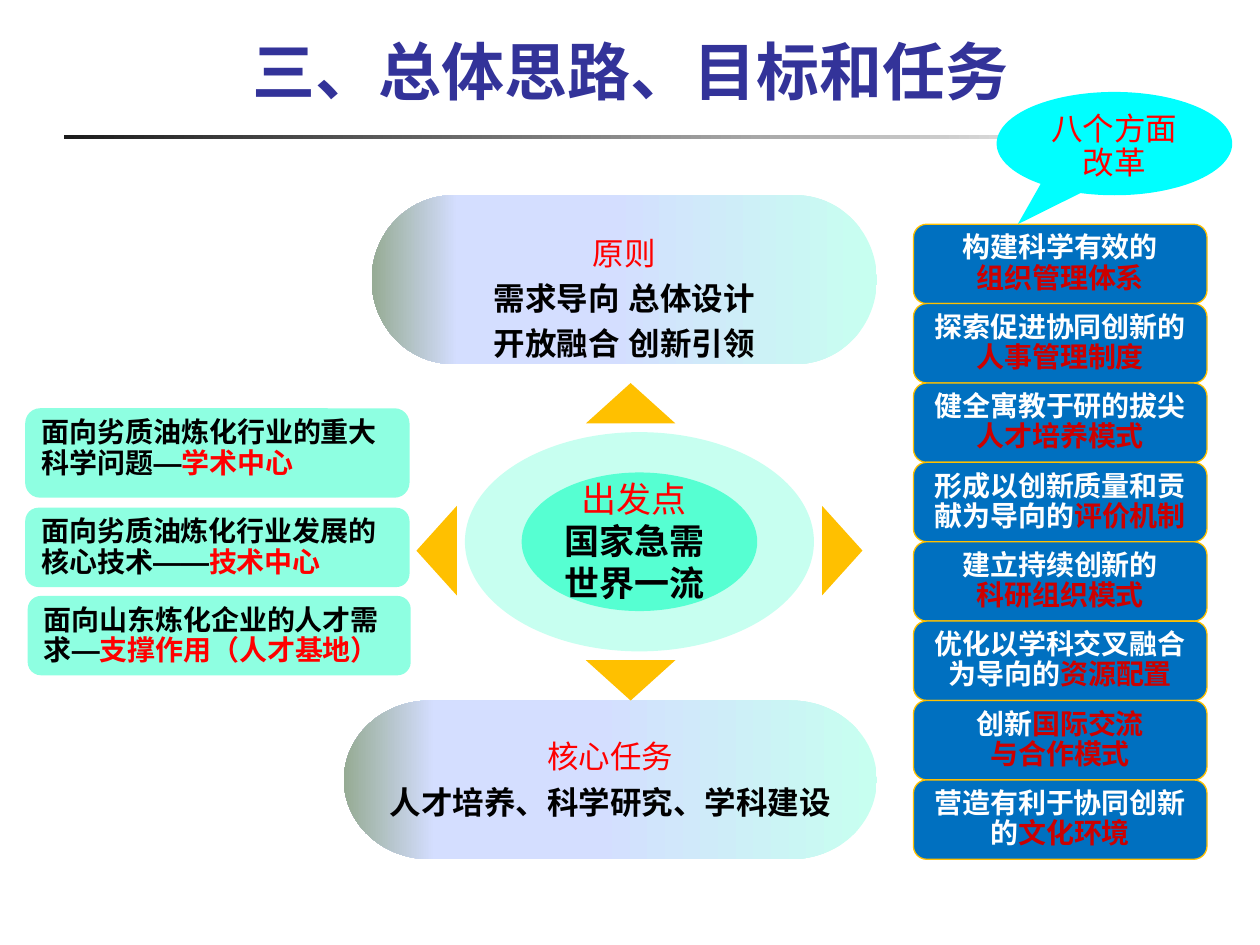
import pptx
import pptx.dml.color
import pptx.enum.lang
import pptx.enum.shapes
import pptx.enum.text
import pptx.oxml
import pptx.oxml.ns
import pptx.util
from pptx.util import Inches

SHAPE = pptx.enum.shapes.MSO_SHAPE
ALIGN = pptx.enum.text.PP_ALIGN
ANCHOR = pptx.enum.text.MSO_ANCHOR

RED, DARK_RED, BLACK, WHITE = "FF0000", "CC0000", "000000", "FFFFFF"
AMBER = "FFC000"
CAPSULE_STOPS = [(0, "C7FFF0"), (53, "D4DEFF"), (83, "D4DEFF"), (100, "96AB94")]
RULE_STOPS = [(0, "1C1C1C"), (100, "FFFFFF")]

# Paragraphs are lists of (text, colour, bold) runs.
TITLE = [[("三、总体思路、目标和任务", "333399", True)]]
CAPSULES = [
    ((2.95, 1.55, 4.01, 1.34), [
        [("原则", RED, False)],
        [("需求导向 总体设计", BLACK, True)],
        [("开放融合 创新引领", BLACK, True)],
    ]),
    ((2.73, 5.56, 4.23, 1.26), [
        [("核心任务", RED, False)],
        [("人才培养、科学研究、学科建设", BLACK, True)],
    ]),
]
CENTRE = [
    [("出发点", RED, False)],
    [("国家急需", BLACK, True)],
    [("世界一流", BLACK, True)],
]
ELLIPSES = [((3.69, 3.43, 2.77, 1.74), "C7FFF0"), ((4.14, 3.75, 1.87, 1.1), "56FFD2")]
ARROWS = [(4.65, 3.04, 0), (4.65, 5.24, 180), (3.11, 4.21, 270), (6.33, 4.21, 90)]
GOALS = [
    ((0.2, 3.24, 3.05, 0.71), "面向劣质油炼化行业的重大科学问题—", "学术中心"),
    ((0.2, 4.03, 3.05, 0.63), "面向劣质油炼化行业发展的核心技术——", "技术中心"),
    ((0.22, 4.73, 3.04, 0.63), "面向山东炼化企业的人才需求—", "支撑作用（人才基地）"),
]
# Each reform: paragraphs of (plain part, highlighted part).
REFORMS = [
    [("构建科学有效的", ""), ("", "组织管理体系")],
    [("探索促进协同创新的", ""), ("", "人事管理制度")],
    [("健全寓教于研的拔尖", ""), ("", "人才培养模式")],
    [("形成以创新质量和贡献为导向的", "评价机制")],
    [("建立持续创新的", ""), ("", "科研组织模式")],
    [("优化以学科交叉融合", ""), ("为导向的", "资源配置")],
    [("创新", "国际交流"), ("", "与合作模式")],
    [("营造有利于协同创新", ""), ("的", "文化环境")],
]
REFORM_LEFT, REFORM_TOP, REFORM_WIDTH, REFORM_HEIGHT = 7.25, 1.78, 2.33, 0.63


def rgb(colour):
    return pptx.dml.color.RGBColor.from_string(colour)


def write(shape, paragraphs, size, align=ALIGN.CENTER, spacings=(1,),
          font="Arial", anchor=ANCHOR.TOP):
    """Fill a shape with text; the last spacing serves all further paragraphs."""
    frame = shape.text_frame
    frame.word_wrap = True
    frame.vertical_anchor = anchor
    frame.margin_left = frame.margin_right = Inches(0.1)
    frame.margin_top = frame.margin_bottom = Inches(0.05)
    for index, runs in enumerate(paragraphs):
        paragraph = frame.paragraphs[0] if index == 0 else frame.add_paragraph()
        paragraph.alignment = align
        paragraph.line_spacing = float(spacings[min(index, len(spacings) - 1)])
        paragraph.space_before = pptx.util.Pt(0)
        for text, colour, bold in runs:
            run = paragraph.add_run()
            run.text = text
            run.font.size = pptx.util.Pt(size)
            run.font.bold = bold
            run.font.name = font
            run.font.color.rgb = rgb(colour)
            run.font.language_id = pptx.enum.lang.MSO_LANGUAGE_ID.SIMPLIFIED_CHINESE
            east_asian = pptx.oxml.parse_xml(
                f'<a:ea {pptx.oxml.ns.nsdecls("a")} typeface="Arial"/>')
            run.font._element.append(east_asian)


def add_shape(slide, kind, box, fill, line=None):
    shape = slide.shapes.add_shape(kind, *map(Inches, box))
    shape.shadow.inherit = False
    shape.fill.solid()
    shape.fill.fore_color.rgb = rgb(fill)
    if line:
        shape.line.color.rgb = rgb(line)
        shape.line.width = pptx.util.Pt(0.75)
    else:
        shape.line.fill.background()
    return shape


def set_gradient(shape, stops, angle):
    stop_xml = "".join(
        f'<a:gs pos="{position * 1000}"><a:srgbClr val="{colour}"/></a:gs>'
        for position, colour in stops)
    gradient = pptx.oxml.parse_xml(
        f'<a:gradFill {pptx.oxml.ns.nsdecls("a")} rotWithShape="1">'
        f'<a:gsLst>{stop_xml}</a:gsLst><a:lin ang="{angle * 60000}" scaled="0"/></a:gradFill>')
    properties = shape._element.spPr
    solid = properties.find(pptx.oxml.ns.qn("a:solidFill"))
    properties.replace(solid, gradient)


def main():
    presentation = pptx.Presentation()
    presentation.slide_width, presentation.slide_height = Inches(10), Inches(7.5)
    slide = presentation.slides.add_slide(presentation.slide_layouts[5])

    rule = add_shape(slide, SHAPE.RECTANGLE, (0.51, 1.07, 9, 0.03), WHITE)
    set_gradient(rule, RULE_STOPS, 0)

    title = slide.shapes.title
    title.left, title.top, title.width, title.height = map(Inches, (0, 0.21, 10, 0.71))
    write(title, TITLE, 36)

    for box, paragraphs in CAPSULES:
        capsule = add_shape(slide, SHAPE.FLOWCHART_TERMINATOR, box, WHITE)
        set_gradient(capsule, CAPSULE_STOPS, 180)
        write(capsule, paragraphs, 18, spacings=(1.2,))

    for box, colour in ELLIPSES:
        add_shape(slide, SHAPE.FLOWCHART_CONNECTOR, box, colour)
    for left, top, rotation in ARROWS:
        arrow = add_shape(slide, SHAPE.ISOSCELES_TRIANGLE, (left, top, 0.71, 0.32), AMBER)
        arrow.rotation = rotation

    for box, topic, role in GOALS:
        goal = add_shape(slide, SHAPE.ROUNDED_RECTANGLE, box, "8EFFE1")
        write(goal, [[(topic, BLACK, True), (role, RED, True)]], 16,
              align=ALIGN.LEFT, spacings=(0.9,))

    callout = add_shape(slide, SHAPE.OVAL_CALLOUT, (7.91, 0.73, 1.87, 0.82), "00FFFF")
    callout.adjustments[0], callout.adjustments[1] = -0.41, 0.78
    write(callout, [[("八个方面改革", RED, False)]], 18, spacings=(0.9,))

    for row, reform in enumerate(REFORMS):
        box = (REFORM_LEFT, REFORM_TOP + row * REFORM_HEIGHT, REFORM_WIDTH, REFORM_HEIGHT)
        shape = add_shape(slide, SHAPE.ROUNDED_RECTANGLE, box, "0070C0", line=AMBER)
        paragraphs = [
            [(text, colour, True) for text, colour in zip(parts, (WHITE, DARK_RED)) if text]
            for parts in reform]
        write(shape, paragraphs, 16, spacings=(0.9,), font="Noto Sans CJK SC",
              anchor=ANCHOR.MIDDLE)

    centre = slide.shapes.add_textbox(*map(Inches, (3.89, 3.67, 2.29, 1.18)))
    write(centre, CENTRE, 20, spacings=(1.2, 1))

    presentation.save("out.pptx")


if __name__ == "__main__":
    main()
